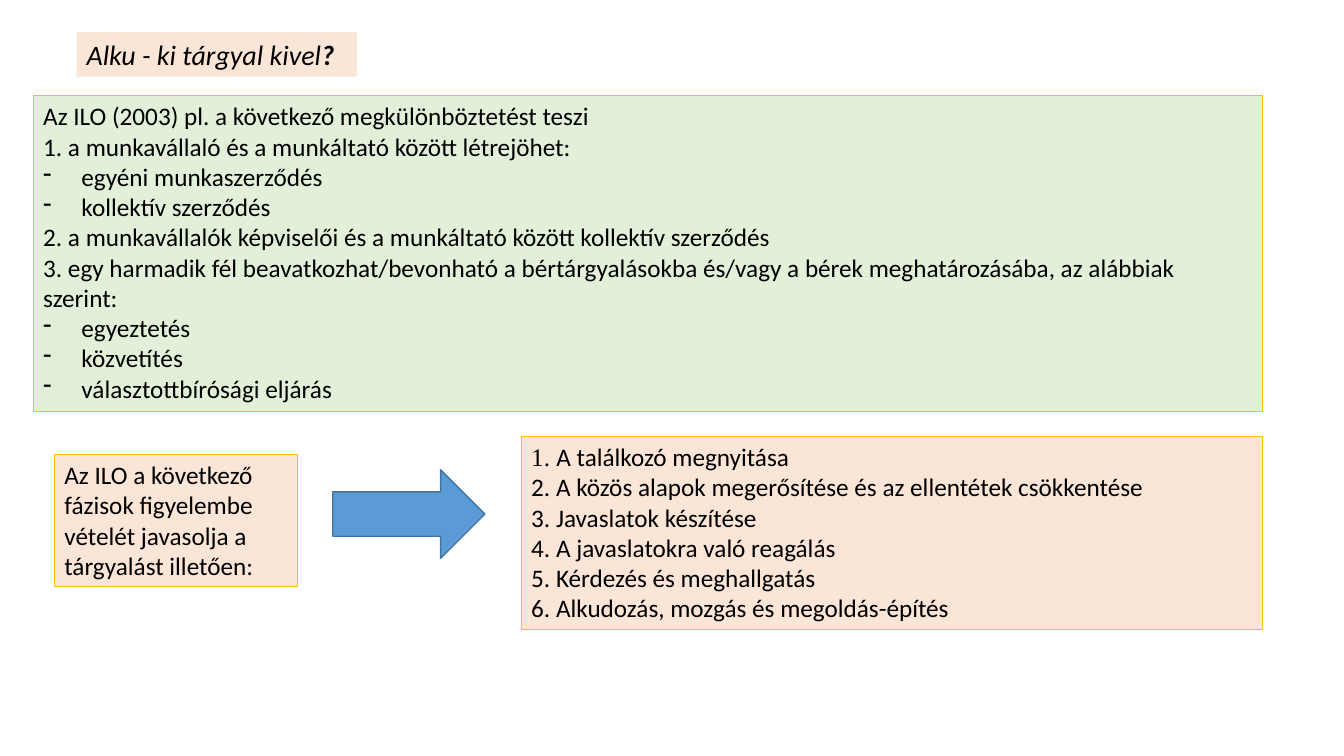
from dataclasses import dataclass

import pptx
import pptx.dml.color
import pptx.enum.shapes
import pptx.enum.text
import pptx.oxml.ns
import pptx.util
from lxml import etree

Inches = pptx.util.Inches
Shapes = pptx.enum.shapes.MSO_SHAPE


@dataclass(frozen=True)
class Theme:
    peach: str = "FBE5D6"
    green: str = "E2F0D9"
    gold: str = "FFC000"
    blue: str = "5B9BD5"
    dark_blue: str = "43739E"
    text: str = "000000"
    font: str = "Calibri"
    number_font: str = "Times New Roman"
    title_size: int = 20
    body_size: int = 18
    box_line: float = 0.75
    arrow_line: float = 1
    bullet_indent: float = 0.38


THEME = Theme()
BULLET = "- "

TITLE = [[("Alku - ki tárgyal kivel", {"italic": True}),
          ("?", {"italic": True, "bold": True})]]
DISTINCTIONS = [
    "Az ILO (2003) pl. a következő megkülönböztetést teszi",
    "1. a munkavállaló és a munkáltató között létrejöhet:",
    "- egyéni munkaszerződés",
    "- kollektív szerződés",
    "2. a munkavállalók képviselői és a munkáltató között kollektív szerződés",
    "3. egy harmadik fél beavatkozhat/bevonható a bértárgyalásokba és/vagy "
    "a bérek meghatározásába, az alábbiak szerint:",
    "- egyeztetés",
    "- közvetítés",
    "- választottbírósági eljárás",
]
PHASES_INTRO = ["Az ILO a következő fázisok figyelembe vételét javasolja a tárgyalást illetően:"]
PHASES = [
    [("1. ", {"name": THEME.number_font}), ("A találkozó megnyitása", {})],
    "2. A közös alapok megerősítése és az ellentétek csökkentése",
    "3. Javaslatok készítése",
    "4. A javaslatokra való reagálás",
    "5. Kérdezés és meghallgatás",
    "6. Alkudozás, mozgás és megoldás-építés",
]


def color(value):
    return pptx.dml.color.RGBColor.from_string(value)


def add_panel(slide, box, fill, line=None, width=THEME.box_line, kind=Shapes.RECTANGLE):
    shape = slide.shapes.add_shape(kind, *map(Inches, box))
    shape.shadow.inherit = False
    shape.fill.solid()
    shape.fill.fore_color.rgb = color(fill)
    if line:
        shape.line.color.rgb = color(line)
        shape.line.width = pptx.util.Pt(width)
    else:
        shape.line.fill.background()
    return shape


def add_dash(paragraph):
    """Give the paragraph a hanging dash bullet."""
    indent = Inches(THEME.bullet_indent)
    properties = paragraph._p.get_or_add_pPr()
    properties.set("marL", str(indent))
    properties.set("indent", str(-indent))
    bullet = etree.SubElement(properties, pptx.oxml.ns.qn("a:buChar"))
    bullet.set("char", BULLET.strip())


def write_text(shape, paragraphs, size):
    """Fill the shape; a paragraph is a string or a list of (text, format) runs."""
    frame = shape.text_frame
    frame.word_wrap = True
    frame.vertical_anchor = pptx.enum.text.MSO_ANCHOR.TOP
    for index, content in enumerate(paragraphs):
        paragraph = frame.add_paragraph() if index else frame.paragraphs[0]
        paragraph.alignment = pptx.enum.text.PP_ALIGN.LEFT
        runs = content
        if isinstance(content, str):
            if content.startswith(BULLET):
                add_dash(paragraph)
            runs = [(content.removeprefix(BULLET), {})]
        for text, changes in runs:
            run = paragraph.add_run()
            run.text = text
            values = {"name": THEME.font, "size": pptx.util.Pt(size), **changes}
            for attribute, value in values.items():
                setattr(run.font, attribute, value)
            run.font.color.rgb = color(THEME.text)


def add_title(slide, box):
    write_text(add_panel(slide, box, THEME.peach), TITLE, THEME.title_size)


def add_distinctions(slide, box):
    panel = add_panel(slide, box, THEME.green, THEME.gold)
    write_text(panel, DISTINCTIONS, THEME.body_size)


def add_phases(slide, box):
    """Place the introduction, the arrow and the list of phases from left to right."""
    left, top, width, height = box
    list_left = 4.63
    intro = add_panel(slide, (left, top + 0.18, 2.41, 1.31), THEME.peach, THEME.gold)
    write_text(intro, PHASES_INTRO, THEME.body_size)
    add_panel(slide, (left + 2.76, top + 0.33, 1.51, 0.88), THEME.blue,
              THEME.dark_blue, THEME.arrow_line, Shapes.RIGHT_ARROW)
    phases = add_panel(slide, (left + list_left, top, width - list_left, height),
                       THEME.peach, THEME.gold)
    write_text(phases, PHASES, THEME.body_size)


def main():
    presentation = pptx.Presentation()
    presentation.slide_width = Inches(13.33)
    presentation.slide_height = Inches(7.5)
    slide = presentation.slides.add_slide(presentation.slide_layouts[6])
    add_title(slide, (0.76, 0.32, 2.78, 0.44))
    add_distinctions(slide, (0.33, 0.95, 12.19, 3.13))
    add_phases(slide, (0.54, 4.33, 11.98, 1.92))
    presentation.save("out.pptx")


if __name__ == "__main__":
    main()
